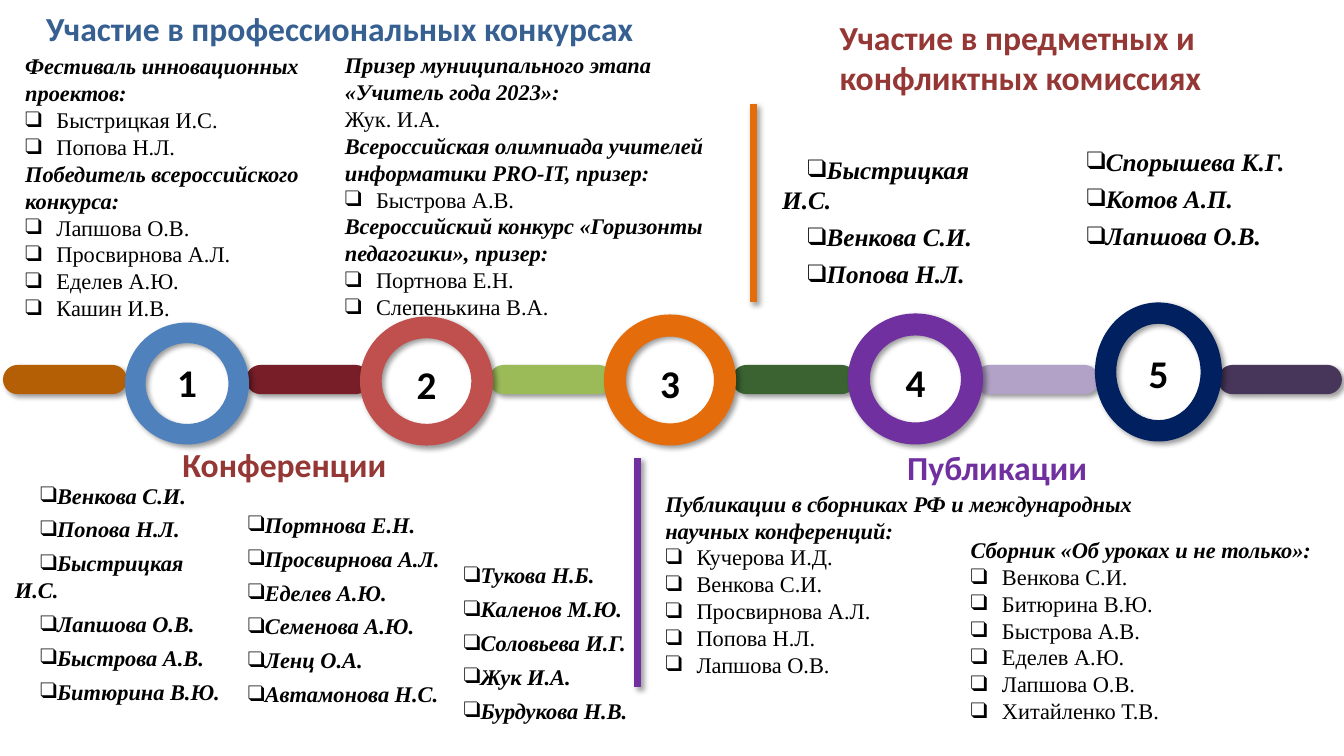
from lxml.etree import SubElement
from pptx import Presentation
from pptx.dml.color import RGBColor
from pptx.enum.shapes import MSO_CONNECTOR, MSO_SHAPE
from pptx.enum.text import MSO_ANCHOR, MSO_AUTO_SIZE, PP_ALIGN
from pptx.oxml.ns import qn
from pptx.util import Inches, Pt

COLORS = {
    "black": "000000", "orange": "E46C0A", "purple": "7030A0", "navy": "002060",
    "red": "C0504D", "blue": "4F81BD", "brown": "B45F06", "wine": "771E28",
    "lime": "9BBB59", "green": "3A6331", "lilac": "B3A2C7", "plum": "48365A",
    "dark red": "953735", "dark blue": "376092",
}
CELL = Inches(0.01)  # the slide is a grid of 1333 columns by 750 rows
HANGING, FIRST_LINE = (31, -31), (0, 25)  # left margin and indent in cells


def add_shadow(shape):
    effects = shape.element.spPr.find(qn("a:effectLst"))
    if effects is None:
        effects = SubElement(shape.element.spPr, qn("a:effectLst"))
    shadow = SubElement(effects, qn("a:outerShdw"), blurRad=str(Pt(4)), dist=str(Pt(3)),
                        dir=str(45 * 60000), algn="tl", rotWithShape="0")
    color = SubElement(shadow, qn("a:srgbClr"), val=COLORS["black"])
    SubElement(color, qn("a:alpha"), val="40000")


def write(box, text, size, font="Times New Roman", color="black", bold=True, italic=False,
          align=PP_ALIGN.LEFT, indent=None, after=0):
    """Add one paragraph to the box; an indent in cells makes it a bullet."""
    frame = box.text_frame
    frame.word_wrap = True
    frame.auto_size = MSO_AUTO_SIZE.NONE
    frame.vertical_anchor = MSO_ANCHOR.TOP
    para = frame.add_paragraph() if frame.text else frame.paragraphs[0]
    para.alignment = align
    para.line_spacing = 1.0
    para.space_before, para.space_after = Pt(0), Pt(after)
    props = para._p.get_or_add_pPr()
    margin, first = indent or (0, 0)
    props.set("marL", str(margin * CELL))
    props.set("indent", str(first * CELL))
    if indent:
        SubElement(props, qn("a:buFont"), typeface="Times New Roman")
        SubElement(props, qn("a:buChar"), char="❑")
    else:
        SubElement(props, qn("a:buNone"))
    span = para.add_run()
    span.text = text
    span.font.name, span.font.size = font, Pt(size)
    span.font.bold, span.font.italic = bold, italic
    span.font.color.rgb = RGBColor.from_string(COLORS[color])


deck = Presentation()
deck.slide_width, deck.slide_height = 1333 * CELL, 750 * CELL
page = deck.slides.add_slide(deck.slide_layouts[3])
shapes = page.shapes
title, *bodies = page.placeholders

# Vertical dividers
for column, bottom, top, color in [(747, 300, 103, "orange"), (632, 682, 454, "purple")]:
    divider = shapes.add_connector(MSO_CONNECTOR.STRAIGHT, column * CELL, bottom * CELL,
                                   column * CELL, top * CELL)
    divider.line.color.rgb = RGBColor.from_string(COLORS[color])
    divider.line.width = Pt(5)
    add_shadow(divider)

# Timeline: bars at an equal pitch, then numbered rings
timeline = []
for index, color in enumerate(["brown", "wine", "lime", "green", "lilac", "plum"]):
    bar = shapes.add_shape(MSO_SHAPE.ROUNDED_RECTANGLE, (3 + 241 * index) * CELL, 362 * CELL,
                           123 * CELL, 29 * CELL)
    timeline.append((bar, 0.5, color))

rings = [
    ("1", "blue", 124, 320, 123, 121, 351),
    ("2", "red", 357, 314, 132, 128, 353),
    ("3", "orange", 599, 312, 131, 130, 352),
    ("4", "purple", 841, 311, 134, 130, 351),
    ("5", "navy", 1086, 300, 126, 138, 342),
]
for number, color, left, top, width, height, number_top in rings:
    group = shapes.add_group_shape()
    ring = group.shapes.add_shape(MSO_SHAPE.DONUT, left * CELL, top * CELL,
                                  width * CELL, height * CELL)
    timeline.append((ring, 0.168, color))
    label = group.shapes.add_textbox((left + 20) * CELL, number_top * CELL,
                                     (width - 40) * CELL, 50 * CELL)
    write(label, number, 28, "Calibri", align=PP_ALIGN.CENTER)

for shape, adjustment, color in timeline:
    shape.adjustments[0] = adjustment
    shape.fill.solid()
    shape.fill.fore_color.rgb = RGBColor.from_string(COLORS[color])
    shape.line.fill.background()
    shape.shadow.inherit = False
    add_shadow(shape)

# Headings
title.left, title.top, title.width, title.height = (n * CELL for n in (32, 3, 610, 49))
write(title, "Участие в профессиональных конкурсах", 24, "Calibri", "dark blue",
      align=PP_ALIGN.CENTER)
headings = [
    ("Участие в предметных и конфликтных комиссиях", "dark red", 823, 12, 439, 92),
    ("Конференции", "dark red", 171, 435, 399, 43),
    ("Публикации", "purple", 890, 438, 344, 76),
]
for text, color, *place in headings:
    write(shapes.add_textbox(*(n * CELL for n in place)), text, 24, "Calibri", color)

# Lists of names in bold italics
name_lists = [
    ((766, 148, 241, 113), 18, PP_ALIGN.LEFT, ["Быстрицкая И.С.", "Венкова С.И.", "Попова Н.Л."]),
    ((1043, 140, 259, 115), 18, PP_ALIGN.LEFT, ["Спорышева К.Г.", "Котов А.П.", "Лапшова О.В."]),
    ((5, 473, 227, 254), 16, PP_ALIGN.JUSTIFY,
     ["Венкова С.И.", "Попова Н.Л.", "Быстрицкая И.С.", "Лапшова О.В.", "Быстрова А.В.",
      "Битюрина В.Ю."]),
    ((211, 502, 253, 304), 16, PP_ALIGN.JUSTIFY,
     ["Портнова Е.Н.", "Просвирнова А.Л.", "Еделев А.Ю.", "Семенова А.Ю.", "Ленц О.А.",
      "Автамонова Н.С."]),
    ((425, 552, 227, 254), 16, PP_ALIGN.JUSTIFY,
     ["Тукова Н.Б.", "Каленов М.Ю.", "Соловьева И.Г.", "Жук И.А.", "Бурдукова Н.В."]),
]
for place, size, align, names in name_lists:
    box = shapes.add_textbox(*(n * CELL for n in place))
    for name in names:
        write(box, name, size, italic=True, align=align, indent=FIRST_LINE, after=5)

# Lists with subheadings: the contests fill the body placeholders
contests, winners = bodies[:2]
publications, collection = (shapes.add_textbox(0, 0, CELL, CELL) for _ in range(2))
sections = [
    (contests, (15, 47, 307, 300), [
        ("Фестиваль инновационных проектов:", HANGING, ["Быстрицкая И.С.", "Попова Н.Л."]),
        ("Победитель всероссийского конкурса:", HANGING,
         ["Лапшова О.В.", "Просвирнова А.Л.", "Еделев А.Ю.", "Кашин И.В."])]),
    (winners, (332, 46, 407, 273), [
        ("Призер муниципального этапа «Учитель года 2023»:", None, ["Жук. И.А."]),
        ("Всероссийская олимпиада учителей информатики PRO-IT, призер:", HANGING,
         ["Быстрова А.В."]),
        ("Всероссийский конкурс «Горизонты педагогики», призер:", HANGING,
         ["Портнова Е.Н.", "Слепенькина В.А."])]),
    (publications, (650, 481, 515, 273), [
        ("Публикации в сборниках РФ и международных научных конференций:", HANGING,
         ["Кучерова И.Д.", "Венкова С.И.", "Просвирнова А.Л.", "Попова Н.Л.", "Лапшова О.В."])]),
    (collection, (953, 527, 367, 180), [
        ("Сборник «Об уроках и не только»:", HANGING,
         ["Венкова С.И.", "Битюрина В.Ю.", "Быстрова А.В.", "Еделев А.Ю.", "Лапшова О.В.",
          "Хитайленко Т.В."])]),
]
for box, place, parts in sections:
    box.left, box.top, box.width, box.height = (n * CELL for n in place)
    for subheading, indent, names in parts:
        write(box, subheading, 16, italic=True)
        for name in names:
            write(box, name, 16, bold=False, indent=indent)

deck.save("out.pptx")
